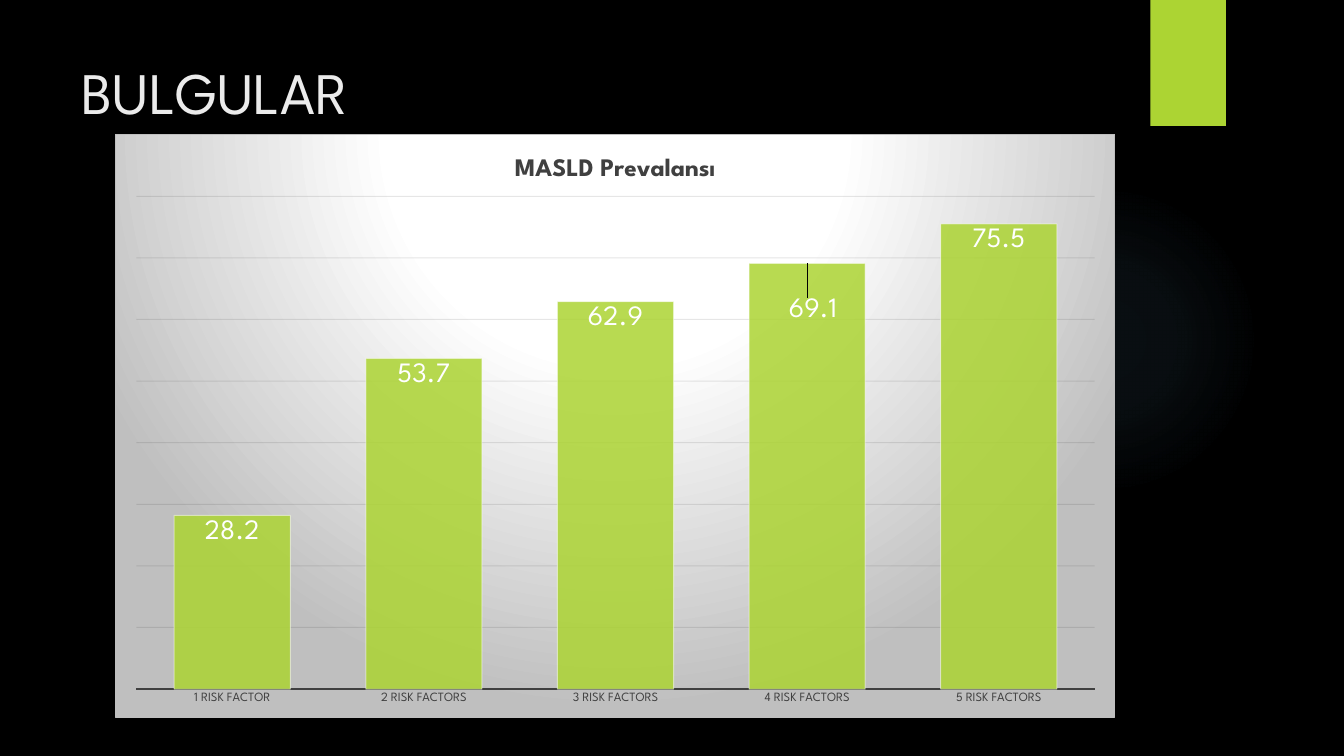
from lxml import etree
from pptx import Presentation
from pptx.chart.data import CategoryChartData
from pptx.dml.color import RGBColor
from pptx.enum import chart as ch, shapes, text
from pptx.oxml import parse_xml
from pptx.oxml.ns import nsdecls, qn
from pptx.util import Inches, Pt

HEADING = "BULGULAR"
CHART_TITLE = "MASLD Prevalansı"
PREVALENCE = {
    "1 RISK FACTOR": 28.2,
    "2 RISK FACTORS": 53.7,
    "3 RISK FACTORS": 62.9,
    "4 RISK FACTORS": 69.1,
    "5 RISK FACTORS": 75.5,
}
FONT = "League Spartan"
GREEN, DARK, WHITE = "ACD433", "404040", "FFFFFF"
GLOW_AT = (9.41, 1.83, 3.08, 3.08)
TAB_AT = (11.41, 0, 0.75, 1.25)
HEADING_AT = (0.71, 0.5, 10.29, 1.53)
CHART_AT = (1.14, 1.33, 9.92, 5.79)
# Fractions of the chart area
PLOT_LAYOUT = {"layoutTarget": "inner", "xMode": "edge", "yMode": "edge",
               "x": 0.021, "y": 0.106, "w": 0.959, "h": 0.846}
SHIFTED_LABEL, LABEL_SHIFT = 3, {"x": 0.006, "y": 0.052}


def rgb(value):
    return RGBColor.from_string(value)


def set_font(font, size, color, bold=False):
    for key, value in {"name": FONT, "size": Pt(size), "bold": bold}.items():
        setattr(font, key, value)
    font.color.rgb = rgb(color)


def set_line(line, color, width, alpha=100):
    line.color.rgb = rgb(color)
    line.width = Pt(width)
    set_alpha(line.fill, color_parent=line._get_or_add_ln(), alpha=alpha)


def set_alpha(fill, color_parent, alpha):
    """Make the solid colour under color_parent alpha percent opaque."""
    if alpha < 100:
        color = color_parent.find(qn("a:solidFill"))[0]
        etree.SubElement(color, qn("a:alpha"), val=str(alpha * 1000))


def radial_gradient(stops, top=50, bottom=50):
    """Circular gradient; stops are (position, colour, opacity) in percent."""
    stop_xml = "".join(
        f'<a:gs pos="{pos * 1000}"><a:srgbClr val="{color}">'
        f'<a:alpha val="{alpha * 1000}"/></a:srgbClr></a:gs>'
        for pos, color, alpha in stops)
    return parse_xml(
        f'<a:gradFill {nsdecls("a")} rotWithShape="1"><a:gsLst>{stop_xml}</a:gsLst>'
        f'<a:path path="circle"><a:fillToRect l="50000" t="{top * 1000}" '
        f'r="50000" b="{bottom * 1000}"/></a:path></a:gradFill>')


def manual_layout(values):
    parts = "".join(f'<c:{key} val="{value}"/>' for key, value in values.items())
    return parse_xml(f'<c:layout {nsdecls("c")}><c:manualLayout>{parts}'
                     '</c:manualLayout></c:layout>')


def add_decor(slide, preset, place):
    decor = slide.shapes.add_shape(preset, *map(Inches, place))
    decor.shadow.inherit = False
    decor.line.fill.background()
    return decor


def add_backdrop(slide):
    slide.background.fill.solid()
    slide.background.fill.fore_color.rgb = rgb("000000")
    glow = add_decor(slide, shapes.MSO_SHAPE.OVAL, GLOW_AT)
    glow.element.spPr.find(qn("a:prstGeom")).addnext(radial_gradient(
        [(0, "7AC4F0", 7), (36, "7AC4F0", 6), (69, "7AC4F0", 0)]))
    tab = add_decor(slide, shapes.MSO_SHAPE.RECTANGLE, TAB_AT)
    tab.fill.solid()
    tab.fill.fore_color.rgb = rgb(GREEN)


def add_heading(slide):
    heading = slide.shapes.title
    for side, value in zip(("left", "top", "width", "height"), HEADING_AT):
        setattr(heading, side, Inches(value))
    frame = heading.text_frame
    frame.text = HEADING
    frame.vertical_anchor = text.MSO_ANCHOR.TOP
    frame.paragraphs[0].alignment = text.PP_ALIGN.LEFT
    set_font(frame.paragraphs[0].runs[0].font, 42, "EBEBEB")


def style_chart_area(chart):
    area = parse_xml(
        f'<c:spPr {nsdecls("c", "a")}><a:ln w="9525"><a:solidFill>'
        '<a:srgbClr val="BFBFBF"/></a:solidFill></a:ln></c:spPr>')
    area.insert(0, radial_gradient(
        [(0, WHITE, 100), (39, WHITE, 100), (100, "BFBFBF", 100)], -80, 180))
    chart.element.find(qn("c:chart")).addnext(area)
    plot_area = chart.element.find(".//" + qn("c:plotArea"))
    for old in plot_area.findall(qn("c:layout")):
        plot_area.remove(old)
    plot_area.insert(0, manual_layout(PLOT_LAYOUT))


def style_axes(chart):
    categories, values = chart.category_axis, chart.value_axis
    categories.major_tick_mark = ch.XL_TICK_MARK.NONE
    set_font(categories.tick_labels.font, 9, DARK)
    set_line(categories.format.line, DARK, 1.5)
    scale = {"minimum_scale": 0, "maximum_scale": 80, "major_unit": 10,
             "has_major_gridlines": True, "visible": False}
    for key, value in scale.items():
        setattr(values, key, value)
    set_line(values.major_gridlines.format.line, "0D0D0D", 0.75, alpha=10)


def style_bars(chart):
    plot = chart.plots[0]
    plot.gap_width = 65
    plot.vary_by_categories = False
    bars = plot.series[0]
    bars.format.fill.solid()
    bars.format.fill.fore_color.rgb = rgb(GREEN)
    set_alpha(bars.format.fill, bars._element.find(qn("c:spPr")), 85)
    set_line(bars.format.line, WHITE, 0.75, alpha=50)

    labels = bars.data_labels
    labels.show_value = True
    labels.number_format, labels.number_format_is_linked = "0.0", False
    shifted = bars.points[SHIFTED_LABEL].data_label
    for label in (labels, shifted):
        label.position = ch.XL_LABEL_POSITION.INSIDE_END
        set_font(label.font, 20, WHITE)
    shifted_xml = bars._element.find(".//" + qn("c:dLbl"))
    shifted_xml.find(qn("c:idx")).addnext(manual_layout(LABEL_SHIFT))


def add_prevalence_chart(slide):
    data = CategoryChartData(number_format="0.0")
    data.categories = list(PREVALENCE)
    data.add_series("Series 1", list(PREVALENCE.values()))
    chart = slide.shapes.add_chart(
        ch.XL_CHART_TYPE.COLUMN_CLUSTERED, *map(Inches, CHART_AT), data).chart
    set_font(chart.font, 10, WHITE)
    chart.has_legend = False
    chart.has_title = True
    title = chart.chart_title.text_frame
    title.text = CHART_TITLE
    set_font(title.paragraphs[0].runs[0].font, 18, DARK, bold=True)
    chart.chart_title.include_in_layout = False
    style_chart_area(chart)
    style_axes(chart)
    style_bars(chart)


def main():
    deck = Presentation()
    deck.slide_width, deck.slide_height = Inches(13.33), Inches(7.5)
    slide = deck.slides.add_slide(deck.slide_layouts[5])
    add_backdrop(slide)
    add_heading(slide)
    add_prevalence_chart(slide)
    deck.save("out.pptx")


if __name__ == "__main__":
    main()
